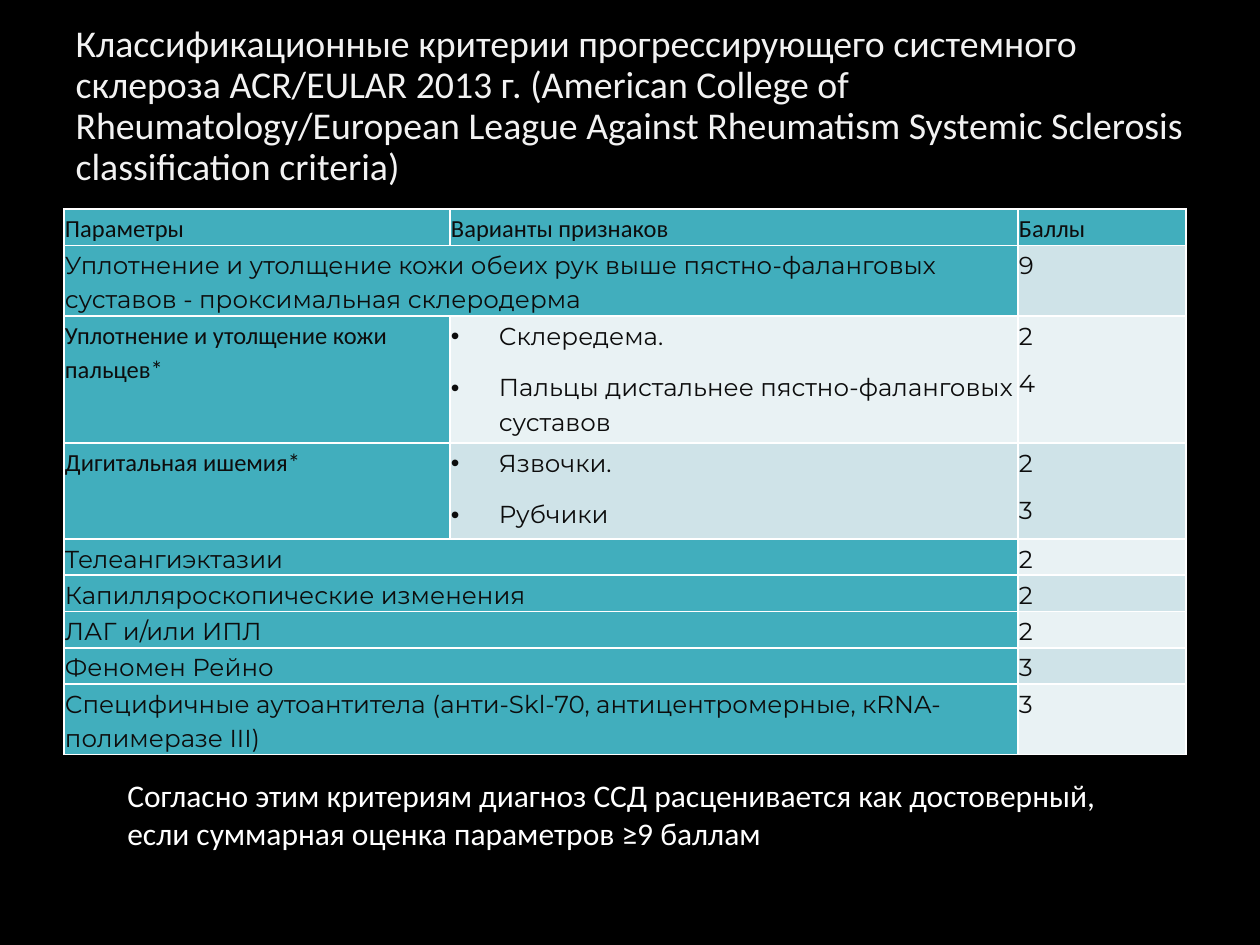
from lxml.etree import SubElement
from pptx import Presentation
from pptx.dml.color import RGBColor
from pptx.enum.text import MSO_ANCHOR as Anchor, MSO_AUTO_SIZE as AutoSize, PP_ALIGN as Align
from pptx.oxml.ns import qn
from pptx.util import Emu, Pt

EMU_PER_PX = 914400 / 126
BLACK = RGBColor(0x00, 0x00, 0x00)
WHITE = RGBColor(0xFF, 0xFF, 0xFF)
TITLE_GREY = RGBColor(0xF2, 0xF2, 0xF2)
CELL_TEXT = RGBColor(0x0D, 0x0D, 0x0D)
TEAL = RGBColor(0x41, 0xAE, 0xBD)
BANDS = (RGBColor(0xE9, 0xF2, 0xF4), RGBColor(0xCF, 0xE3, 0xE8))

TITLE = ("Классификационные критерии прогрессирующего системного склероза ACR/EULAR 2013 г. "
         "(American College of Rheumatology/European League Against Rheumatism "
         "Systemic Sclerosis classification criteria)")
CONCLUSION = ("Cогласно этим критериям диагноз ССД расценивается как достоверный, "
              "если суммарная оценка параметров ≥9 баллам")

HEADINGS = ("Параметры", "Варианты признаков", "Баллы")
# Parameter, its variants (none: the parameter spans two columns), points, row height
CRITERIA = (
    ("Уплотнение и утолщение кожи обеих рук выше пястно-фаланговых суставов"
     " - проксимальная склеродерма", (), ("9",), 69),
    ("Уплотнение и утолщение кожи пальцев*",
     ("Склередема.", "Пальцы дистальнее пястно-фаланговых суставов"), ("2", "4"), 127),
    ("Дигитальная ишемия*", ("Язвочки.", "Рубчики"), ("2", "3"), 96),
    ("Телеангиэктазии", (), ("2",), 35),
    ("Капилляроскопические изменения", (), ("2",), 35),
    ("ЛАГ и/или ИПЛ", (), ("2",), 35),
    ("Феномен Рейно", (), ("3",), 35),
    ("Специфичные аутоантитела (анти-Skl-70, антицентромерные, кRNA-полимеразе III)",
     (), ("3",), 69),
)
COLUMN_WIDTHS = (386, 568, 168)
HEADING_HEIGHT = 35


def px(length):
    return Emu(round(length * EMU_PER_PX))


def format_runs(paragraph, font_name, size, color):
    for run in paragraph.runs:
        run.font.name = font_name
        run.font.size = Pt(size)
        run.font.color.rgb = color


def add_bullet(paragraph):
    properties = paragraph._p.get_or_add_pPr()
    properties.set("marL", str(px(48)))
    properties.set("indent", str(px(-48)))
    SubElement(properties, qn("a:buFont")).set("typeface", "Arial")
    SubElement(properties, qn("a:buChar")).set("char", "•")
    tabs = SubElement(properties, qn("a:tabLst"))
    tab = SubElement(tabs, qn("a:tab"))
    tab.set("pos", str(px(63)))
    tab.set("algn", "l")


def add_borders(cell):
    properties = cell._tc.get_or_add_tcPr()
    for side in ("lnL", "lnR", "lnT", "lnB"):
        line = SubElement(properties, qn(f"a:{side}"))
        line.set("w", str(Pt(1)))
        fill = SubElement(line, qn("a:solidFill"))
        SubElement(fill, qn("a:srgbClr")).set("val", str(WHITE))


def fill_cell(cell, lines, fill_color, font_name="Montserrat", bullets=False):
    cell.fill.solid()
    cell.fill.fore_color.rgb = fill_color
    cell.margin_left = cell.margin_right = px(1)
    cell.margin_top = cell.margin_bottom = px(1)
    cell.text_frame.text = "\n".join(lines)
    paragraphs = cell.text_frame.paragraphs
    for paragraph in paragraphs:
        if bullets:
            add_bullet(paragraph)
            paragraph.space_after = Pt(10)
        elif paragraph.text != lines[-1]:
            paragraph.space_after = Pt(7.5)
        paragraph.line_spacing = 1.15
        format_runs(paragraph, font_name, 14, CELL_TEXT)


def add_title(slide):
    title = slide.shapes.title
    title.left, title.top, title.width, title.height = px(63), px(28), px(1134), px(158)
    frame = title.text_frame
    frame.text = TITLE
    frame.word_wrap = True
    frame.auto_size = AutoSize.NONE
    frame.vertical_anchor = Anchor.MIDDLE
    paragraph = frame.paragraphs[0]
    paragraph.alignment = Align.LEFT
    paragraph.line_spacing = 0.9
    format_runs(paragraph, "Calibri", 21.6, TITLE_GREY)


def add_criteria_table(slide):
    heights = [HEADING_HEIGHT] + [criterion[-1] for criterion in CRITERIA]
    table = slide.shapes.add_table(
        len(heights), len(COLUMN_WIDTHS), px(64), px(209),
        px(sum(COLUMN_WIDTHS)), px(sum(heights))).table
    for column, width in zip(table.columns, COLUMN_WIDTHS):
        column.width = px(width)
    for row, height in zip(table.rows, heights):
        row.height = px(height)
    for cell in table.iter_cells():
        add_borders(cell)

    # Heading row
    for column, heading in enumerate(HEADINGS):
        fill_cell(table.cell(0, column), (heading,), TEAL, "Calibri")

    # Criteria rows with alternating bands
    for row, (parameter, variants, points, _) in enumerate(CRITERIA, start=1):
        band = BANDS[row % 2]
        parameter_cell, variants_cell, points_cell = table.rows[row].cells
        if variants:
            fill_cell(parameter_cell, (parameter,), TEAL, "Calibri")
            fill_cell(variants_cell, variants, band, bullets=True)
        else:
            parameter_cell.merge(variants_cell)
            fill_cell(parameter_cell, (parameter,), TEAL)
        fill_cell(points_cell, points, band)


def add_conclusion(slide):
    frame = slide.shapes.add_textbox(px(115), px(770), px(1032), px(89)).text_frame
    frame.word_wrap = True
    frame.auto_size = AutoSize.SHAPE_TO_FIT_TEXT
    frame.text = CONCLUSION
    format_runs(frame.paragraphs[0], "Calibri", 18, WHITE)


def main():
    presentation = Presentation()
    presentation.slide_width, presentation.slide_height = px(1260), px(945)
    slide = presentation.slides.add_slide(presentation.slide_layouts[5])
    slide.background.fill.solid()
    slide.background.fill.fore_color.rgb = BLACK
    add_title(slide)
    add_criteria_table(slide)
    add_conclusion(slide)
    presentation.save("out.pptx")


if __name__ == "__main__":
    main()
